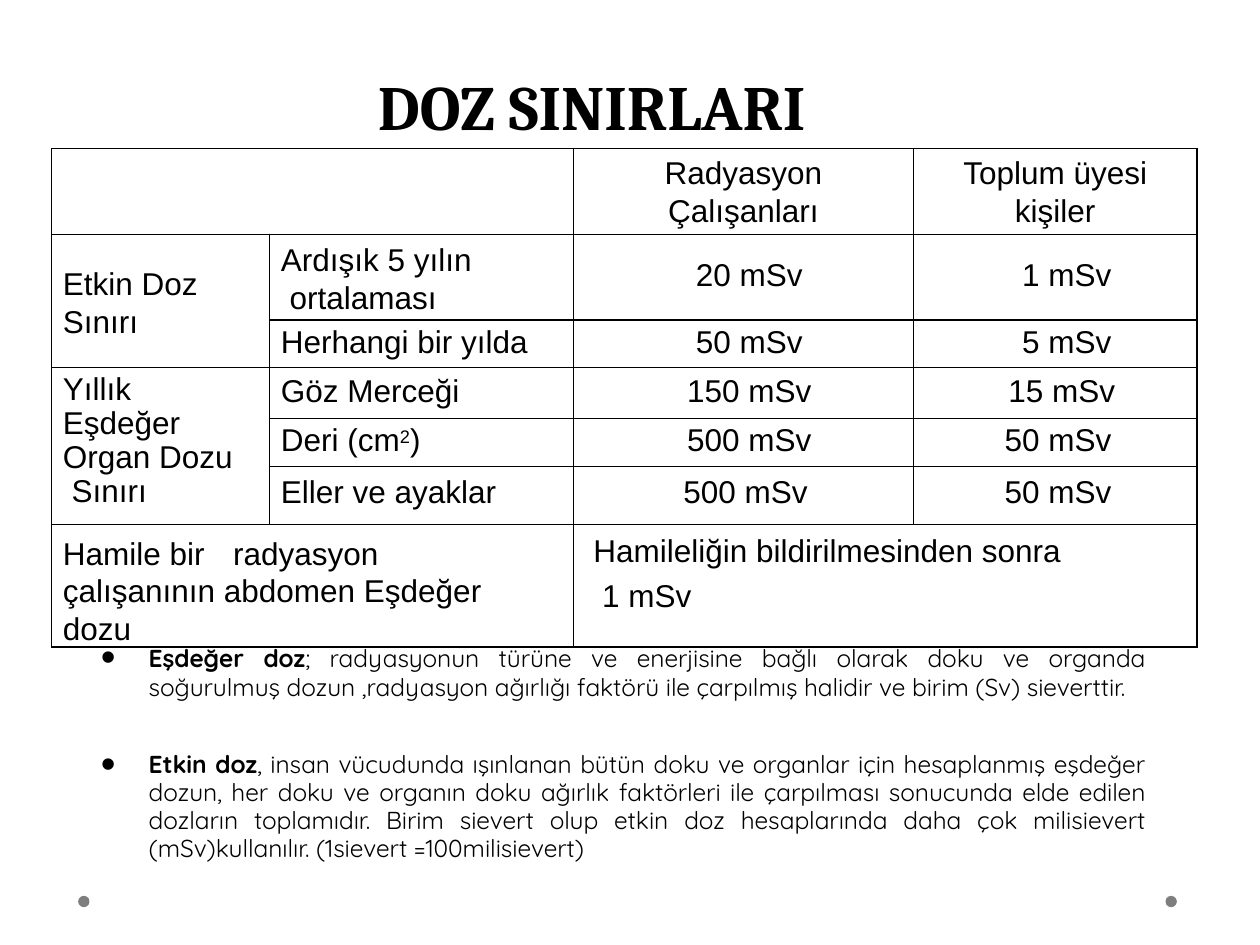
import pptx
import pptx.dml.color
import pptx.enum.shapes
import pptx.enum.text
import pptx.oxml
import pptx.oxml.ns
import pptx.util
from pptx.util import Inches

COLORS = {"text": "000000", "border": "000000", "dot": "7E7E7E"}
ALIGN = pptx.enum.text.PP_ALIGN
COLUMNS = [1.73, 2.41, 2.7, 2.25]
ROWS = [0.68, 0.68, 0.38, 0.4, 0.38, 0.46, 0.74]
MERGES = [((0, 0), (0, 1)), ((1, 0), (2, 0)), ((3, 0), (5, 0)),
          ((6, 0), (6, 1)), ((6, 2), (6, 3))]
# row, column, text, top margin, line spacing
LABELS = [
    (1, 0, "Etkin Doz\nSınırı", 0.24, 21.6),
    (1, 1, "Ardışık 5 yılın\v ortalaması", 0.05, 21.5),
    (2, 1, "Herhangi bir yılda", 0.04, None),
    (3, 0, "Yıllık\nEşdeğer\vOrgan Dozu\v Sınırı", 0.04, 0.97),
    (3, 1, "Göz Merceği", 0.05, None),
    (4, 1, "Deri (cm2)", 0.04, None),
    (5, 1, "Eller ve ayaklar", 0.07, None),
    (6, 0, "Hamile bir\tradyasyon\vçalışanının abdomen Eşdeğer\vdozu", 0.08, 21.5),
]
HEADINGS = ["Radyasyon\nÇalışanları", "Toplum üyesi\nkişiler"]
# row, top margin, (worker dose, right margin), (public dose, right margin)
DOSES = [
    (1, 0.19, ("20 mSv", 0.88), ("1 mSv", 0.68)),
    (2, 0.04, ("50 mSv", 0.88), ("5 mSv", 0.68)),
    (3, 0.05, ("150 mSv", 0.81), ("15 mSv", 0.65)),
    (4, 0.04, ("500 mSv", 0.81), ("50 mSv", 0.68)),
    (5, 0.07, ("500 mSv", 0.84), ("50 mSv", 0.68)),
]
# term, definition, space before, line spacing
DEFINITIONS = [
    ("Eşdeğer doz", "; radyasyonun türüne ve enerjisine bağlı olarak doku ve organda "
     "soğurulmuş dozun ,radyasyon ağırlığı faktörü ile çarpılmış halidir ve birim (Sv) "
     "sieverttir.", None, 1.0),
    ("Etkin doz", ", insan vücudunda ışınlanan bütün doku ve organlar için hesaplanmış "
     "eşdeğer dozun, her doku ve organın doku ağırlık faktörleri ile çarpılması sonucunda "
     "elde edilen dozların toplamıdır. Birim sievert olup etkin doz hesaplarında daha çok "
     "milisievert (mSv)kullanılır. (1sievert =100milisievert)", 28.5, 0.95),
]


def rgb(name):
    return pptx.dml.color.RGBColor.from_string(COLORS[name])


def add_xml(parent, xml):
    declared = xml.replace(" ", " " + pptx.oxml.ns.nsdecls("a") + " ", 1)
    parent.append(pptx.oxml.parse_xml(declared))


def style_font(font, family, size, bold=False):
    font.name, font.size, font.bold = family, pptx.util.Pt(size), bold
    font.color.rgb = rgb("text")


def add_text_frame(slide, left, top, width, height):
    frame = slide.shapes.add_textbox(left, top, width, height).text_frame
    frame.word_wrap = True
    frame.margin_left = frame.margin_right = frame.margin_bottom = 0
    frame.margin_top = Inches(0.01)
    return frame


def add_title(slide, left, top, width, height):
    frame = add_text_frame(slide, left, top, width, height)
    frame.margin_left = Inches(0.01)
    frame.text = "DOZ SINIRLARI"
    style_font(frame.paragraphs[0].runs[0].font, "Cambria", 36, True)


def fill_cell(cell, text, top, spacing=None, align=ALIGN.LEFT, left=0, right=0):
    cell.margin_left, cell.margin_right = Inches(left), Inches(right)
    cell.margin_top, cell.margin_bottom = Inches(top), 0
    cell.text_frame.text = text
    for paragraph in cell.text_frame.paragraphs:
        if "\t" in text:
            add_xml(paragraph._p.get_or_add_pPr(),
                    f'<a:tabLst ><a:tab pos="{Inches(1.35)}" algn="l"/></a:tabLst>')
        paragraph.alignment = align
        if spacing:
            paragraph.line_spacing = pptx.util.Pt(spacing) if spacing > 2 else spacing
        for run in paragraph.runs:
            style_font(run.font, "Arial", 18)


def raise_square(paragraph):
    """Turn the 2 of cm2 into a superscript."""
    before, after = paragraph.runs[0].text.split("2")
    paragraph.runs[0].text = before
    for text in ("2", after):
        run = paragraph.add_run()
        run.text = text
        style_font(run.font, "Arial", 18)
    paragraph.runs[1]._r.get_or_add_rPr().set("baseline", "25000")


def draw_borders(table):
    last_row, last_column = len(ROWS) - 1, len(COLUMNS) - 1
    for r in range(len(ROWS)):
        for c in range(len(COLUMNS)):
            cell = table.cell(r, c)
            heavy = {"L": c == 0, "R": c == last_column,
                     "T": r in (0, 1), "B": r in (0, last_row)}
            properties = cell._tc.get_or_add_tcPr()
            for side, is_heavy in heavy.items():
                width = pptx.util.Pt(1 if is_heavy else 0.75)
                add_xml(properties, f'<a:ln{side} w="{width}"><a:solidFill><a:srgbClr '
                        f'val="{COLORS["border"]}"/></a:solidFill></a:ln{side}>')
            cell.fill.background()


def add_dose_table(slide, left, top, width, height):
    table = slide.shapes.add_table(len(ROWS), len(COLUMNS), left, top, width, height).table
    table.first_row = table.horz_banding = False
    for column, size in zip(table.columns, COLUMNS):
        column.width = Inches(size)
    for row, size in zip(table.rows, ROWS):
        row.height = Inches(size)
    for start, end in MERGES:
        table.cell(*start).merge(table.cell(*end))
    for c, heading in enumerate(HEADINGS, 2):
        fill_cell(table.cell(0, c), heading, 0.04, 21.6, ALIGN.CENTER)
    for r, c, label, margin, spacing in LABELS:
        fill_cell(table.cell(r, c), label, margin, spacing, left=0.09)
    raise_square(table.cell(4, 1).text_frame.paragraphs[0])
    for r, margin, *doses in DOSES:
        for c, (dose, right) in enumerate(doses, 2):
            fill_cell(table.cell(r, c), dose, margin, align=ALIGN.RIGHT, right=right)
    fill_cell(table.cell(6, 2), "Hamileliğin bildirilmesinden sonra\v 1 mSv", 0, 25.8,
              left=0.16)
    draw_borders(table)


def add_definitions(slide, left, top, width, height):
    frame = add_text_frame(slide, left, top, width, height)
    for i, (term, definition, before, spacing) in enumerate(DEFINITIONS):
        paragraph = frame.add_paragraph() if i else frame.paragraphs[0]
        properties = paragraph._p.get_or_add_pPr()
        properties.set("marL", str(Inches(0.39)))
        properties.set("indent", str(Inches(-0.38)))
        add_xml(properties, '<a:buSzPct val="171000"/>')
        add_xml(properties, '<a:buFont typeface="Arial"/>')
        add_xml(properties, '<a:buChar char="•"/>')
        paragraph.alignment = ALIGN.JUSTIFY
        paragraph.line_spacing = spacing
        if before:
            paragraph.space_before = pptx.util.Pt(before)
        for text, bold in ((term, True), (definition, False)):
            run = paragraph.add_run()
            run.text = text
            style_font(run.font, "Quicksand", 14, bold)
            run._r.get_or_add_rPr().set("spc", "-5")


def add_corner_dot(slide, left, top, size):
    dot = slide.shapes.add_shape(pptx.enum.shapes.MSO_SHAPE.OVAL, left, top, size, size)
    dot.shadow.inherit = False
    dot.fill.solid()
    dot.fill.fore_color.rgb = rgb("dot")
    dot.line.fill.background()


def main():
    deck = pptx.Presentation()
    deck.slide_width, deck.slide_height = Inches(10), Inches(7.5)
    slide = deck.slides.add_slide(deck.slide_layouts[6])
    for left in (9.25, 0.62):
        add_corner_dot(slide, Inches(left), Inches(7.11), Inches(0.09))
    add_title(slide, Inches(2.99), Inches(0.53), Inches(4.03), Inches(0.63))
    add_definitions(slide, Inches(0.79), Inches(5.09), Inches(8.3), Inches(1.8))
    add_dose_table(slide, Inches(0.41), Inches(1.18), Inches(9.1), Inches(3.71))
    deck.save("out.pptx")


if __name__ == "__main__":
    main()
